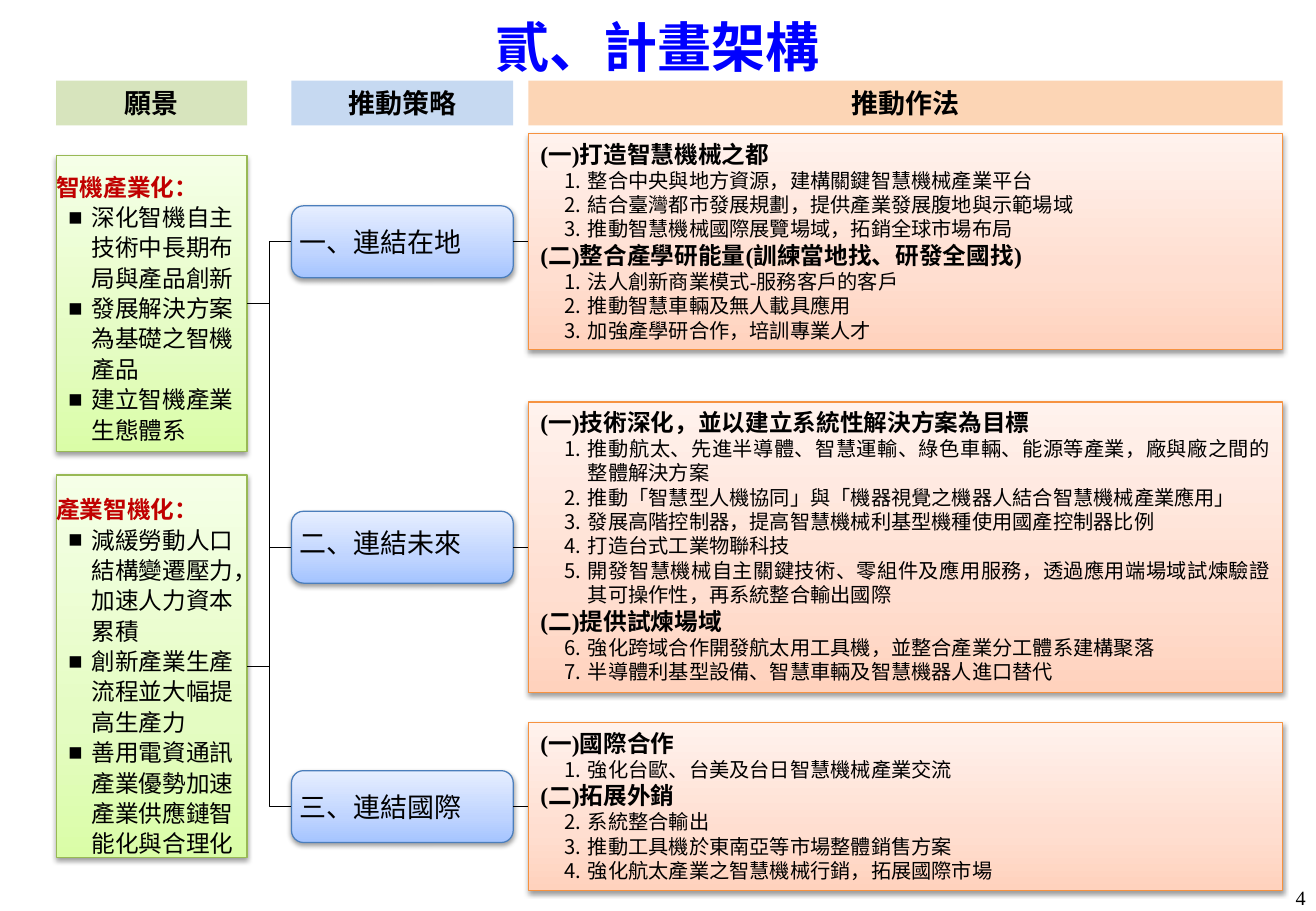
from lxml import etree
from pptx import Presentation
from pptx.dml.color import RGBColor
from pptx.enum.shapes import MSO_CONNECTOR, MSO_SHAPE
from pptx.enum.text import MSO_ANCHOR, PP_ALIGN
from pptx.oxml import parse_xml
from pptx.oxml.ns import nsdecls, qn
from pptx.util import Pt

RECTANGLE = MSO_SHAPE.RECTANGLE
ROUNDED = MSO_SHAPE.FLOWCHART_ALTERNATE_PROCESS
STRAIGHT, ELBOW = MSO_CONNECTOR.STRAIGHT, MSO_CONNECTOR.ELBOW
MIDDLE, BOTTOM, TOP = MSO_ANCHOR.MIDDLE, MSO_ANCHOR.BOTTOM, MSO_ANCHOR.TOP
LEFT, CENTER, RIGHT, JUSTIFY = PP_ALIGN.LEFT, PP_ALIGN.CENTER, PP_ALIGN.RIGHT, PP_ALIGN.JUSTIFY
LEFT_SIDE, RIGHT_SIDE = 1, 3

BLACK = RGBColor(0x00, 0x00, 0x00)
BLUE = RGBColor(0x00, 0x00, 0xFF)
RED = RGBColor(0xC0, 0x00, 0x00)
GREEN_HEAD = RGBColor(0xD7, 0xE4, 0xBD)
BLUE_HEAD = RGBColor(0xC6, 0xD9, 0xF1)
ORANGE_HEAD = RGBColor(0xFC, 0xD5, 0xB5)
GREEN_LINE = RGBColor(0x98, 0xB9, 0x55)
BLUE_LINE = RGBColor(0x4B, 0x7E, 0xBC)
ORANGE_LINE = RGBColor(0xF6, 0x92, 0x40)
# Gradient colours from bottom to top, at 0, 35 and 100 percent
GREENS = [RGBColor(0xDA, 0xFD, 0xA7), RGBColor(0xE4, 0xFC, 0xC2), RGBColor(0xF5, 0xFF, 0xE7)]
BLUES = [RGBColor(0xA4, 0xC4, 0xFF), RGBColor(0xBF, 0xD4, 0xFF), RGBColor(0xE6, 0xEE, 0xFF)]
ORANGES = [RGBColor(0xFF, 0xD2, 0xBD), RGBColor(0xFF, 0xDE, 0xD0), RGBColor(0xFF, 0xF2, 0xED)]

SERIF, SANS, CJK = "Times New Roman", "Arial", "Noto Sans CJK SC"
DEFAULT_INSETS = (7.2, 3.6, 7.2, 3.6)

# Columns: left, width
VISION_COLUMN, STRATEGY_COLUMN, ACTION_COLUMN = (33.3, 113.2), (172.8, 131.4), (313.2, 447.1)
HEADERS = [("願景", VISION_COLUMN, GREEN_HEAD), ("推動策略", STRATEGY_COLUMN, BLUE_HEAD),
           ("推動作法", ACTION_COLUMN, ORANGE_HEAD)]

# Visions: top, height, anchor, heading, points
VISIONS = [
    (92.2, 175.7, MIDDLE, "智機產業化：",
     ["深化智機自主技術中長期布局與產品創新", "發展解決方案為基礎之智機產品", "建立智機產業生態體系"]),
    (281.5, 226.8, BOTTOM, "產業智機化：",
     ["減緩勞動人口結構變遷壓力，加速人力資本累積", "創新產業生產流程並大幅提高生產力",
      "善用電資通訊產業優勢加速產業供應鏈智能化與合理化"]),
]

# Rows: strategy, its line spacing, its vision, top and height of the actions,
# then groups of heading, first number, list level, items
ROWS = [
    ("一、連結在地", None, 0, 79.2, 128.2, [
        ("(一)打造智慧機械之都", 1, 0,
         ["整合中央與地方資源，建構關鍵智慧機械產業平台",
          "結合臺灣都市發展規劃，提供產業發展腹地與示範場域",
          "推動智慧機械國際展覽場域，拓銷全球市場布局"]),
        ("(二)整合產學研能量(訓練當地找、研發全國找)", 1, 1,
         ["法人創新商業模式-服務客戶的客戶", "推動智慧車輛及無人載具應用",
          "加強產學研合作，培訓專業人才"])]),
    ("二、連結未來", Pt(14), 1, 238.3, 172.1, [
        ("(一)技術深化，並以建立系統性解決方案為目標", 1, 0,
         ["推動航太、先進半導體、智慧運輸、綠色車輛、能源等產業，廠與廠之間的整體解決方案",
          "推動「智慧型人機協同」與「機器視覺之機器人結合智慧機械產業應用」",
          "發展高階控制器，提高智慧機械利基型機種使用國產控制器比例",
          "打造台式工業物聯科技",
          "開發智慧機械自主關鍵技術、零組件及應用服務，透過應用端場域試煉驗證其可操作性，再系統整合輸出國際"]),
        ("(二)提供試煉場域", 6, 0,
         ["強化跨域合作開發航太用工具機，並整合產業分工體系建構聚落",
          "半導體利基型設備、智慧車輛及智慧機器人進口替代"])]),
    ("三、連結國際", None, 0, 428.4, 99.4, [
        ("(一)國際合作", 1, 0, ["強化台歐、台美及台日智慧機械產業交流"]),
        ("(二)拓展外銷", 2, 0,
         ["系統整合輸出", "推動工具機於東南亞等市場整體銷售方案",
          "強化航太產業之智慧機械行銷，拓展國際市場"])]),
]


def set_frame(shape, anchor, insets=DEFAULT_INSETS):
    frame = shape.text_frame
    frame.word_wrap = True
    frame.vertical_anchor = anchor
    frame.margin_left, frame.margin_top, frame.margin_right, frame.margin_bottom = map(Pt, insets)
    return frame


def add_para(frame, text, size, font=SERIF, color=BLACK, bold=False, align=LEFT, spacing=None):
    para = frame.paragraphs[0]
    if para.runs:
        para = frame.add_paragraph()
    para.alignment = align
    para.line_spacing = spacing
    span = para.add_run()
    span.text = text
    span.font.size, span.font.name, span.font.bold = Pt(size), font, bold
    span.font.color.rgb = color
    return para


def set_indent(para, margin, hanging, bullet_font=None, bullet_tag=None, **bullet):
    props = para._p.get_or_add_pPr()
    props.set("marL", str(Pt(margin)))
    props.set("indent", str(-Pt(hanging)))
    if bullet_tag:
        etree.SubElement(props, qn("a:buFont")).set("typeface", bullet_font)
        etree.SubElement(props, qn(bullet_tag), **bullet)


def add_card(page, kind, box, colors, line_color):
    """Shape with a three-colour gradient, a thin line and a soft shadow."""
    card = page.shapes.add_shape(kind, *map(Pt, box))
    card.fill.gradient()
    stops = "".join(f'<a:gs pos="{pos}"><a:srgbClr val="{color}"/></a:gs>'
                    for pos, color in zip((0, 35000, 100000), colors))
    old = card._element.spPr.find(qn("a:gradFill"))
    old.getparent().replace(old, parse_xml(
        f'<a:gradFill {nsdecls("a")} rotWithShape="1"><a:gsLst>{stops}</a:gsLst>'
        '<a:lin ang="16200000" scaled="0"/></a:gradFill>'))
    card.line.color.rgb = line_color
    card.line.width = Pt(0.75)
    card.shadow.inherit = False
    card._element.spPr.find(qn("a:effectLst")).append(parse_xml(
        f'<a:outerShdw {nsdecls("a")} blurRad="{Pt(3.1)}" dist="{Pt(1.6)}" dir="5400000" '
        'rotWithShape="0"><a:srgbClr val="000000"><a:alpha val="38000"/></a:srgbClr></a:outerShdw>'))
    return card


def add_label(page, box, anchor, insets, text, size, **style):
    label = page.shapes.add_textbox(*map(Pt, box))
    add_para(set_frame(label, anchor, insets), text, size, **style)


def add_header(page, box, text, color):
    header = page.shapes.add_shape(RECTANGLE, *map(Pt, box))
    header.fill.solid()
    header.fill.fore_color.rgb = color
    header.line.fill.background()
    header.shadow.inherit = False
    add_para(set_frame(header, MIDDLE), text, 16, CJK, bold=True, align=CENTER)


def add_vision(page, box, anchor, heading, points):
    card = add_card(page, RECTANGLE, box, GREENS, GREEN_LINE)
    frame = set_frame(card, anchor, (0, 0, 0, 0))
    add_para(frame, heading, 14, color=RED, bold=True, spacing=Pt(22))
    for point in points:
        para = add_para(frame, point, 14, SANS, spacing=Pt(18))
        set_indent(para, 20.9, 13.7, SANS, "a:buChar", char="■")
    return card


def add_strategy(page, box, text, spacing):
    card = add_card(page, ROUNDED, box, BLUES, BLUE_LINE)
    add_para(set_frame(card, MIDDLE, (2.9, 0, 0, 0)), text, 16, spacing=spacing)
    return card


def add_actions(page, box, groups):
    card = add_card(page, RECTANGLE, box, ORANGES, ORANGE_LINE)
    frame = set_frame(card, TOP)
    for heading, first, level, items in groups:
        set_indent(add_para(frame, heading, 14, bold=True, align=JUSTIFY), 14, 14)
        for item in items:
            para = add_para(frame, item, 12, align=JUSTIFY)
            para.level = level
            set_indent(para, 28.2, 14.2, CJK, "a:buAutoNum", type="arabicPeriod", startAt=str(first))
    return card


def join(page, kind, start, end):
    link = page.shapes.add_connector(kind, 0, 0, 0, 0)
    link.begin_connect(start, RIGHT_SIDE)
    link.end_connect(end, LEFT_SIDE)
    link.line.color.rgb = BLACK
    link.line.width = Pt(0.75)
    etree.SubElement(link._element.spPr, qn("a:effectLst"))


def main():
    deck = Presentation()
    deck.slide_width, deck.slide_height = Pt(780), Pt(540)
    page = deck.slides.add_slide(deck.slide_layouts[6])

    # Title, page number and column headers
    add_label(page, (0, 4.3, 780, 46), MIDDLE, DEFAULT_INSETS, "貳、計畫架構", 32,
              color=BLUE, bold=True, align=CENTER)
    add_label(page, (593.3, 504, 182, 36), BOTTOM, (1.4, 0.7, 1.4, 0.7), "4", 12, align=RIGHT)
    for text, (left, width), color in HEADERS:
        add_header(page, (left, 47.8, width, 26.6), text, color)

    # Visions, and each strategy centred on its actions
    left, width = VISION_COLUMN
    visions = [add_vision(page, (left, top, width, height), *content)
               for top, height, *content in VISIONS]
    for name, spacing, vision, top, height, groups in ROWS:
        left, width = ACTION_COLUMN
        actions = add_actions(page, (left, top, width, height), groups)
        left, width = STRATEGY_COLUMN
        strategy = add_strategy(page, (left, top + height / 2 - 21.3, width, 42.6), name, spacing)
        join(page, ELBOW, visions[vision], strategy)
        join(page, STRAIGHT, strategy, actions)

    deck.save("out.pptx")


if __name__ == "__main__":
    main()
